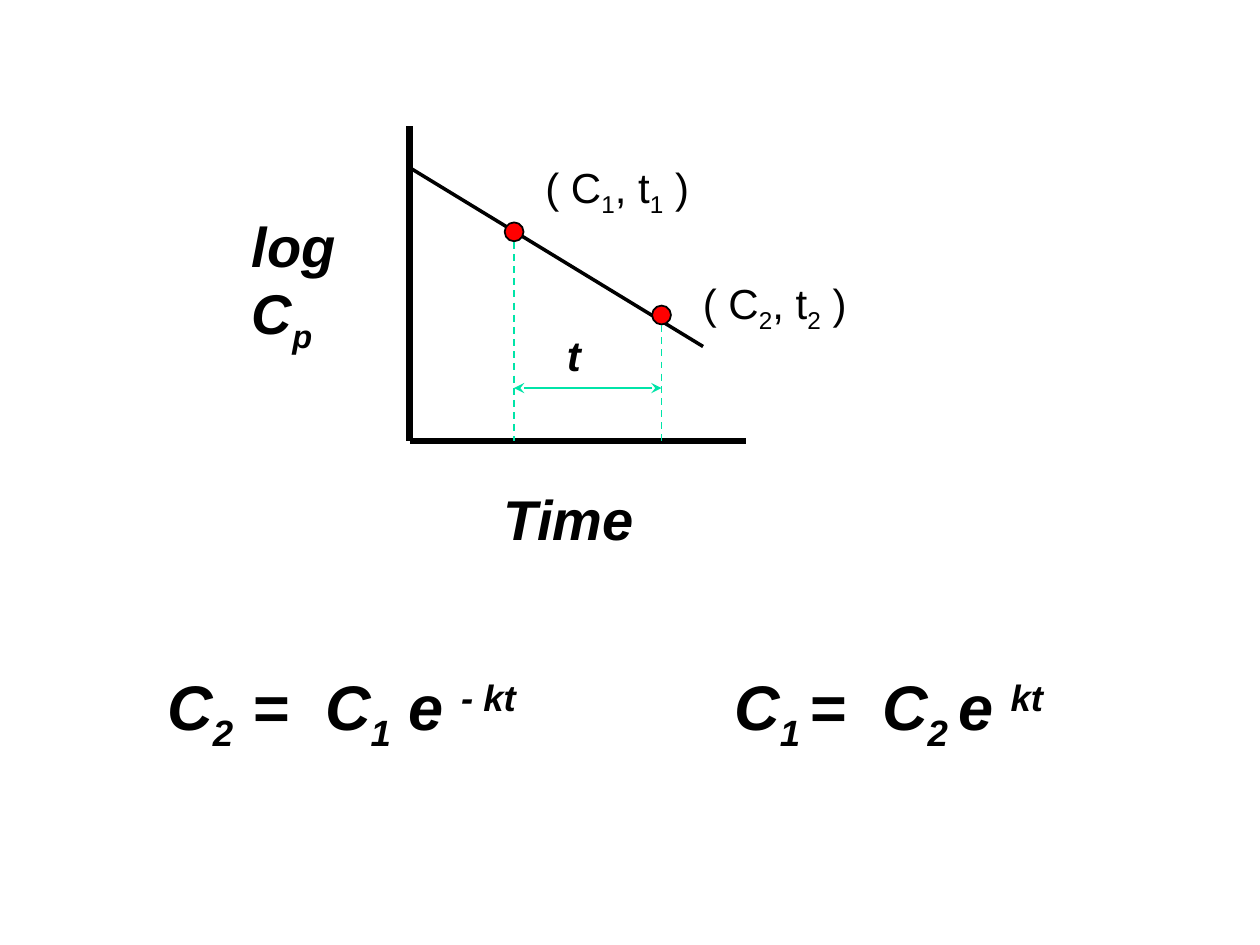
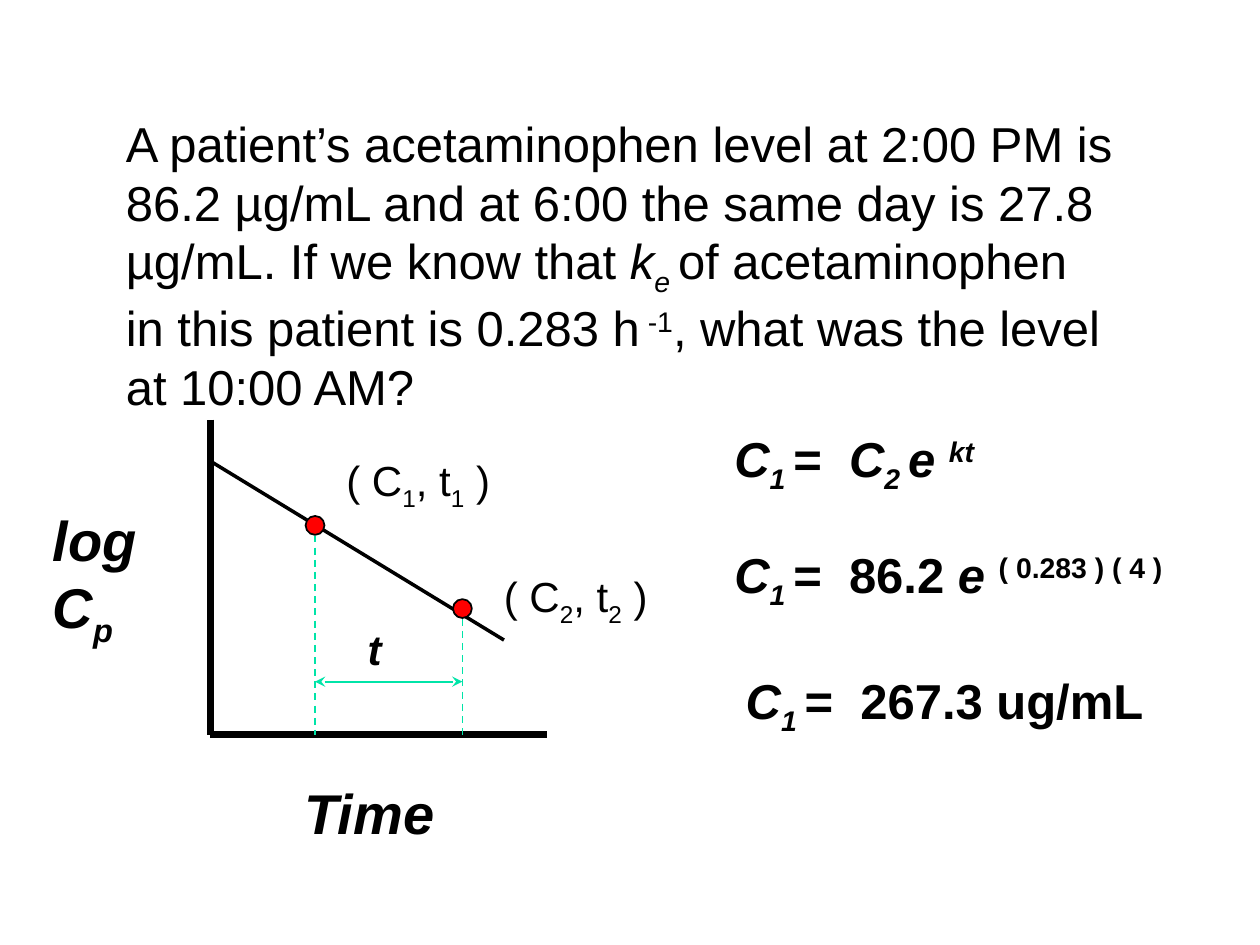
"""Build two slides on first-order elimination: the equations and a worked case."""
import pptx
import pptx.dml.color
import pptx.enum.dml
import pptx.enum.shapes
import pptx.enum.text
import pptx.oxml.ns
import pptx.util
from lxml import etree

EMU_PER_PX = 9144
FONT = "Arial"
BLACK, RED, GREEN = "000000", "FF0000", "00E4A8"
SUB, SUP = -25000, 30000
AXIS_W, AXIS_H = 267, 250
DOT = 15


def px(n):
    return pptx.util.Emu(round(n * EMU_PER_PX))


def rgb(color):
    return pptx.dml.color.RGBColor.from_string(color)


def add_child(parent, tag, **attrs):
    return etree.SubElement(parent, pptx.oxml.ns.qn(tag), **attrs)


def add_text(slide, x, y, w, h, paragraphs, size, bold=False):
    tf = slide.shapes.add_textbox(px(x), px(y), px(w), px(h)).text_frame
    tf.word_wrap = False
    tf.auto_size = pptx.enum.text.MSO_AUTO_SIZE.SHAPE_TO_FIT_TEXT
    for i, runs in enumerate(paragraphs):
        p = tf.paragraphs[0] if i == 0 else tf.add_paragraph()
        p.font.name, p.font.size, p.font.bold = FONT, pptx.util.Pt(size), bold
        p.font.color.rgb = rgb(BLACK)
        for text, italic, baseline in runs:
            r = p.add_run()
            r.text = text
            r.font.italic = italic
            if baseline:
                r._r.get_or_add_rPr().set("baseline", str(baseline))


def plain(text, baseline=0):
    return text, False, baseline


def ital(text, baseline=0):
    return text, True, baseline


def add_line(slide, x1, y1, x2, y2, color, width, dashed=False, arrows=False):
    kind = pptx.enum.shapes.MSO_CONNECTOR.STRAIGHT
    sp = slide.shapes.add_connector(kind, px(x1), px(y1), px(x2), px(y2))
    sp.line.color.rgb = rgb(color)
    sp.line.width = pptx.util.Pt(width)
    if dashed:
        sp.line.dash_style = pptx.enum.dml.MSO_LINE.DASH
    if arrows:
        for end in ("a:headEnd", "a:tailEnd"):
            add_child(sp.line._get_or_add_ln(), end, type="stealth")
    add_child(sp._element.spPr, "a:effectLst")


def add_dot(slide, cx, cy):
    kind = pptx.enum.shapes.MSO_SHAPE.OVAL
    sp = slide.shapes.add_shape(kind, px(cx - DOT / 2), px(cy - DOT / 2), px(DOT), px(DOT))
    sp.shadow.inherit = False
    sp.fill.solid()
    sp.fill.fore_color.rgb = rgb(RED)
    sp.line.color.rgb = rgb(BLACK)
    sp.line.width = pptx.util.Pt(1)


def add_graph(slide, x, y):
    base = y + AXIS_H
    points = [("1", x + 83, y + 84, x + 98, y + 23), ("2", x + 200, y + 150, x + 223, y + 115)]
    add_line(slide, x, y, x, base, BLACK, 4)
    add_line(slide, x, base, x + AXIS_W, base, BLACK, 4)
    add_line(slide, x, y + 33, x + 233, y + 175, BLACK, 2)
    for n, cx, cy, label_x, label_y in points:
        add_dot(slide, cx, cy)
        add_line(slide, cx, cy + 8, cx, base, GREEN, 1, dashed=True)
        label = [plain("( C"), plain(n, SUB), plain(", t"), plain(n, SUB), plain(" )")]
        add_text(slide, label_x, label_y, 137, 50, [label], 24)
    add_line(slide, points[0][1], y + 208, points[1][1], y + 208, GREEN, 1, arrows=True)
    add_text(slide, x + 115, y + 157, 40, 50, [[ital("t")]], 24, bold=True)
    add_text(slide, x - 135, y + 63, 99, 117,
             [[ital("log")], [ital("C"), ital("p", SUB)]], 32, bold=True)
    add_text(slide, x + 65, y + 280, 136, 63, [[ital("Time")]], 32, bold=True)


def add_equation(slide, x, y, w, h, runs, size):
    add_text(slide, x, y, w, h, [runs], size, bold=True)


def add_equations_slide(prs, earlier_level):
    slide = prs.slides.add_slide(prs.slide_layouts[6])
    add_graph(slide, 325, 100)
    later_level = [ital("C"), ital("2  ", SUB), plain("=  "), ital("C"), ital("1", SUB),
                   ital(" e "), ital("- kt", SUP)]
    add_equation(slide, 123, 525, 324, 70, later_level, 36)
    add_equation(slide, 573, 525, 299, 70, earlier_level, 36)


def add_case_slide(prs, c1, earlier_level):
    slide = prs.slides.add_slide(prs.slide_layouts[6])
    question = [
        [plain("A patient’s acetaminophen level at 2:00 PM is")],
        [plain("86.2 µg/mL and at 6:00 the same day is 27.8")],
        [plain("µg/mL. If we know that "), ital("k"), ital("e ", SUB), plain("of acetaminophen")],
        [plain("in this patient is 0.283 h"), plain(" -1", SUP), plain(", what was the level")],
        [plain("at 10:00 AM?")],
    ]
    add_text(slide, 90, 85, 808, 244, question, 28)
    add_graph(slide, 167, 333)
    substituted = c1 + [plain("=  86.2"), ital(" e "), plain("( 0.283 ) ( 4 )", SUP)]
    add_equation(slide, 573, 335, 231, 57, earlier_level, 28)
    add_equation(slide, 573, 427, 390, 57, substituted, 28)
    add_equation(slide, 582, 527, 343, 57, c1 + [plain("=  267.3 ug/mL")], 28)


def main():
    prs = pptx.Presentation()
    prs.slide_width, prs.slide_height = px(1000), px(750)
    c1 = [ital("C"), ital("1 ", SUB)]
    earlier_level = c1 + [plain("=  "), ital("C"), ital("2 ", SUB), ital("e "), ital("kt", SUP)]
    add_equations_slide(prs, earlier_level)
    add_case_slide(prs, c1, earlier_level)
    prs.save("out.pptx")


if __name__ == "__main__":
    main()
